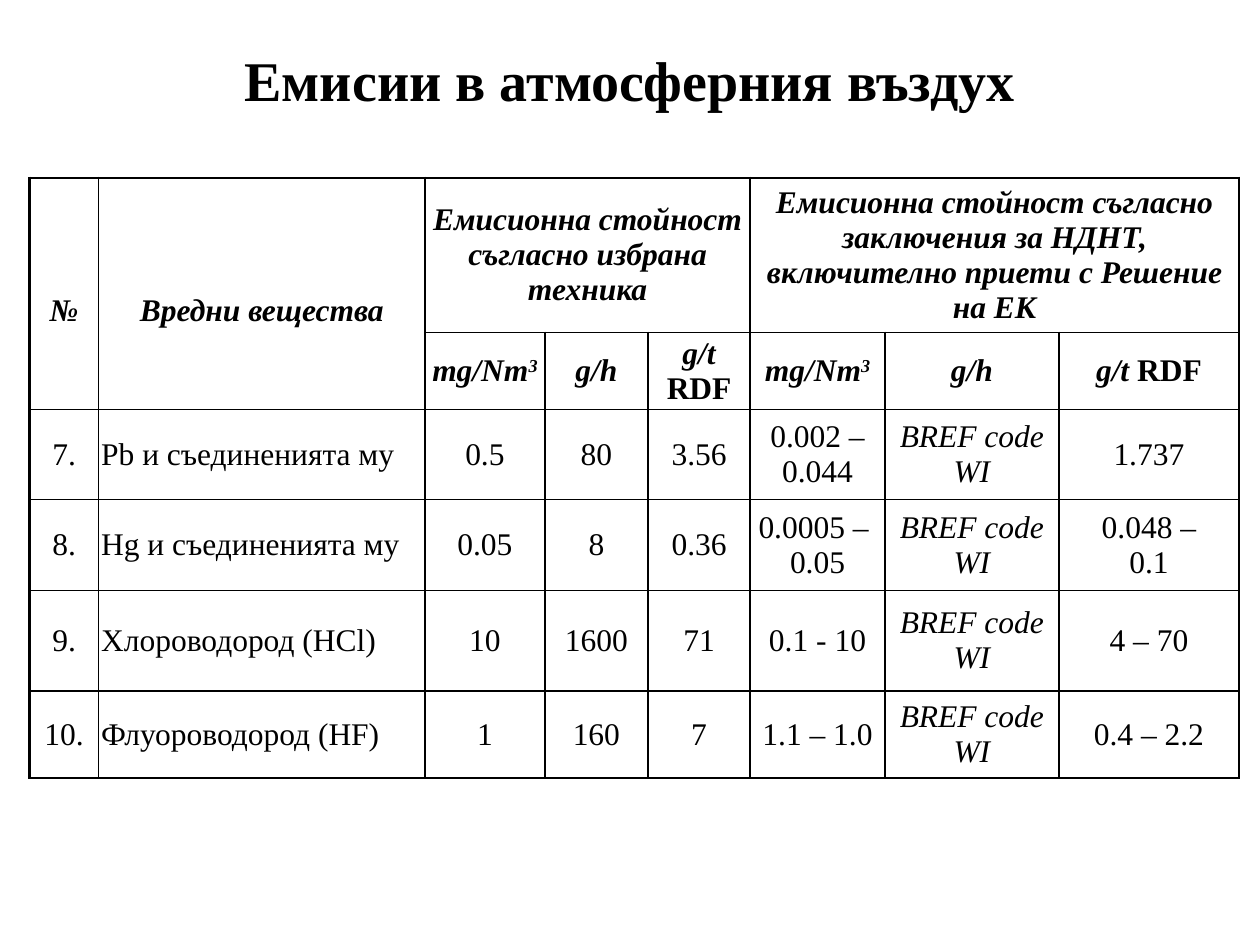
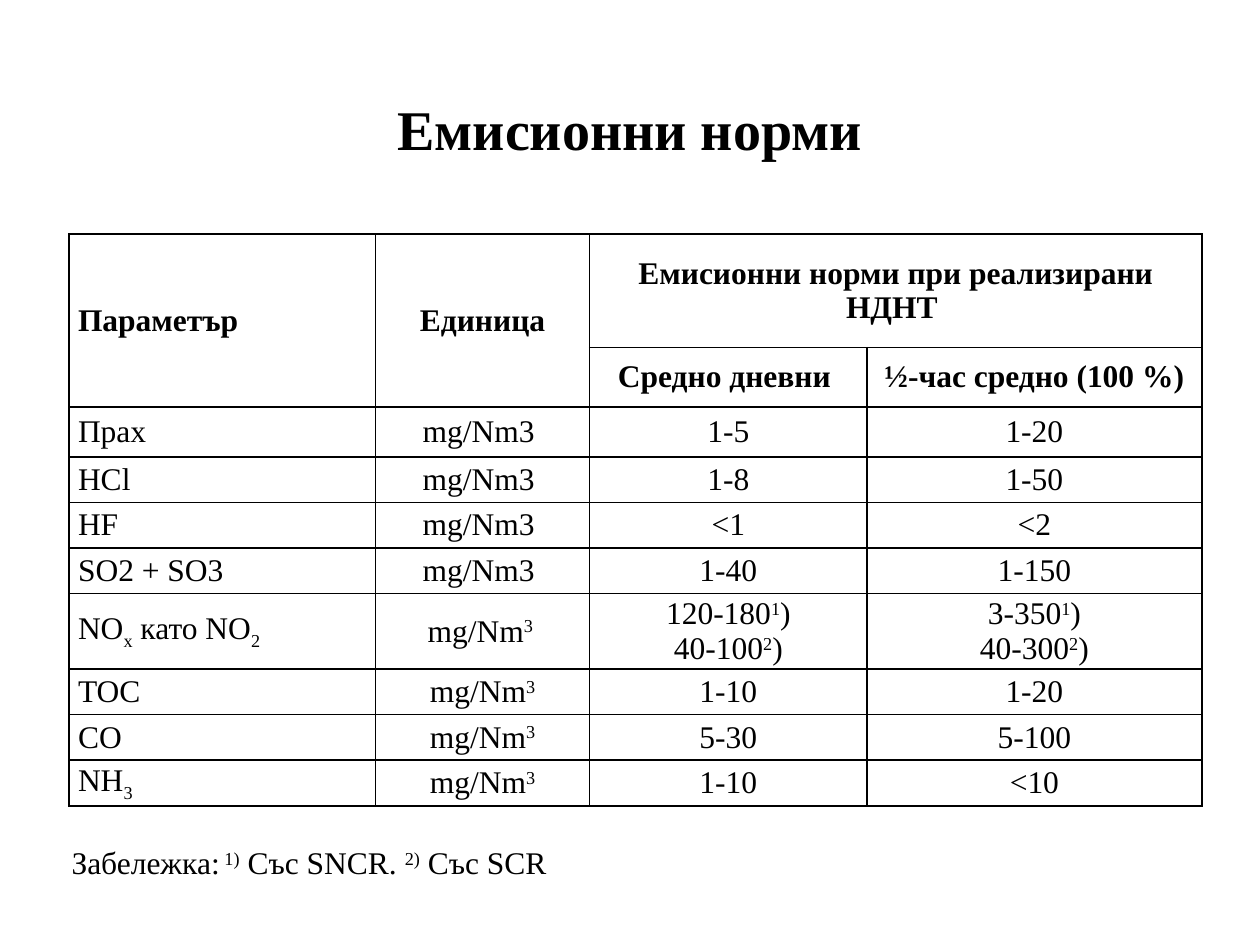
from lxml.etree import SubElement
from pptx import Presentation
from pptx.dml.color import RGBColor
from pptx.enum.text import MSO_ANCHOR, MSO_AUTO_SIZE, PP_ALIGN
from pptx.oxml.ns import qn
from pptx.util import Pt

BLACK = RGBColor(0x00, 0x00, 0x00)
WHITE = RGBColor(0xFF, 0xFF, 0xFF)
FONT = "Times New Roman"
BODY_SIZE = 18
TITLE_SIZE = 32
THIN, HEAVY = 1, 1.5
BASELINES = {"^": "30000", "~": "-25000"}

BREF = "_ВREF сode WI_"
AIR_COLUMNS = [39.6, 186.5, 68.4, 59, 58.4, 77, 99.4, 103]
AIR_ROWS = [88.4, 44, 51.6, 51.8, 57.4, 50]
AIR_CELLS = [
    ["*_№_*", "*_Вредни вещества_*",
     "*_Емисионна стойност съгласно избрана техника_*", None, None,
     "*_Емисионна стойност съгласно заключения за НДНТ, "
     "включително приети с Решение на ЕК_*", None, None],
    [None, None] + ["*_mg/Nm^3^_*", "*_g/h_*", "*_g/t _RDF*"] * 2,
    ["7.", "Pb и съединенията му", "0.5", "80", "3.56",
     "0.002 –\n0.044", BREF, "1.737"],
    ["8.", "Hg и съединенията му", "0.05", "8", "0.36",
     "0.0005 – \n0.05", BREF, "0.048 –\n0.1"],
    ["9.", "Хлороводород (HCl)", "10", "1600", "71", "0.1 - 10", BREF, "4 – 70"],
    ["10.", "Флуороводород (HF)", "1", "160", "7", "1.1 – 1.0", BREF, "0.4 – 2.2"],
]
# Top-left cell of each merged area: (rows, columns) it covers
AIR_SPANS = {(0, 0): (2, 1), (0, 1): (2, 1), (0, 2): (1, 3), (0, 5): (1, 3)}

LIMIT_COLUMNS = [175, 122.4, 158.4, 191.4]
LIMIT_ROWS = [64.8, 33.8, 28.8, 26, 26, 26, 39.5, 26, 26, 26]
LIMIT_CELLS = [
    ["*Параметър*", "*Единица*", "*Емисионни норми при реализирани НДНТ *", None],
    [None, None, "*Средно дневни *", "*½-час средно (100 %)*"],
    ["Прах", "mg/Nm3 ", "1-5", "1-20"],
    ["HCl", "mg/Nm3 ", "1-8", "1-50"],
    ["HF", "mg/Nm3 ", "<1", "<2"],
    ["SO2 + SO3", "mg/Nm3 ", "1-40", "1-150"],
    ["NO~x~ като NO~2~", "mg/Nm^3 ^", "120-180^1^)\n40-100^2^)",
     "3-350^1^)\n40-300^2^)"],
    ["TOC", "mg/Nm^3^", "1-10", "1-20"],
    ["CO", "mg/Nm^3^", "5-30", "5-100"],
    ["NH~3~", "mg/Nm^3^", "1-10", "<10"],
]
LIMIT_SPANS = {(0, 0): (2, 1), (0, 1): (2, 1), (0, 2): (1, 2)}


def split_marks(text):
    """Yield (text, active marks): *bold*, _italic_, ^raised^, ~lowered~."""
    active, piece = set(), ""
    for character in text:
        if character in "*_^~":
            if piece:
                yield piece, frozenset(active)
            active ^= {character}
            piece = ""
        else:
            piece += character
    if piece:
        yield piece, frozenset(active)


def write_text(text_frame, text, size, alignment):
    for index, line in enumerate(text.split("\n")):
        paragraph = text_frame.paragraphs[0] if index == 0 else text_frame.add_paragraph()
        paragraph.alignment = alignment
        for piece, marks in split_marks(line):
            run = paragraph.add_run()
            run.text = piece
            run.font.name = FONT
            run.font.size = Pt(size)
            run.font.color.rgb = BLACK
            run.font.bold = "*" in marks
            run.font.italic = "_" in marks
            for mark in marks & BASELINES.keys():
                run.font._element.set("baseline", BASELINES[mark])


def add_text(slide, box, text, size, alignment, anchor=MSO_ANCHOR.TOP):
    shape = slide.shapes.add_textbox(*map(Pt, box))
    shape.text_frame.word_wrap = True
    shape.text_frame.vertical_anchor = anchor
    write_text(shape.text_frame, text, size, alignment)
    return shape


def add_title(slide, top, text):
    add_text(slide, (36, top, 648, 62), f"*{text}*", TITLE_SIZE, PP_ALIGN.CENTER)


def add_note(slide, box, text):
    shape = add_text(slide, box, text, BODY_SIZE, PP_ALIGN.LEFT, MSO_ANCHOR.MIDDLE)
    shape.text_frame.auto_size = MSO_AUTO_SIZE.SHAPE_TO_FIT_TEXT


def draw_borders(cell, widths):
    """Draw the left, right, top and bottom borders with the given widths."""
    properties = cell._tc.get_or_add_tcPr()
    for side, width in zip("LRTB", widths):
        line = SubElement(properties, qn(f"a:ln{side}"), w=str(Pt(width)))
        fill = SubElement(line, qn("a:solidFill"))
        SubElement(fill, qn("a:srgbClr"), val=str(BLACK))


def add_grid(slide, left, top, columns, rows, cells, spans, inset,
             heavy_columns, heavy_rows, left_aligned, body_fill=None):
    """Add a ruled table with two header rows.

    heavy_columns and heavy_rows number the grid lines drawn heavy;
    left_aligned is (column, first row) of the left-aligned text.
    """
    frame = slide.shapes.add_table(len(rows), len(columns), Pt(left), Pt(top),
                                   Pt(sum(columns)), Pt(sum(rows)))
    table = frame.table
    table.first_row = table.horz_banding = False
    for column, width in zip(table.columns, columns):
        column.width = Pt(width)
    for row, height in zip(table.rows, rows):
        row.height = Pt(height)
    for row, values in enumerate(cells):
        for column, value in enumerate(values):
            cell = table.cell(row, column)
            if value is None:
                cell.fill.background()
                continue
            height, width = spans.get((row, column), (1, 1))
            if (height, width) != (1, 1):
                cell.merge(table.cell(row + height - 1, column + width - 1))
            cell.vertical_anchor = MSO_ANCHOR.MIDDLE
            cell.margin_left = cell.margin_right = Pt(inset)
            cell.margin_top = cell.margin_bottom = 0
            is_left = column == left_aligned[0] and row >= left_aligned[1]
            write_text(cell.text_frame, value, BODY_SIZE,
                       PP_ALIGN.LEFT if is_left else PP_ALIGN.CENTER)
            draw_borders(cell, [HEAVY if heavy else THIN for heavy in (
                column in heavy_columns, column + width in heavy_columns,
                row in heavy_rows, row + height in heavy_rows)])
            if body_fill is not None and row >= 2:
                cell.fill.solid()
                cell.fill.fore_color.rgb = body_fill
            else:
                cell.fill.background()
    return table


def build_air_emissions(slide):
    table = add_grid(slide, 16.8, 101.6, AIR_COLUMNS, AIR_ROWS, AIR_CELLS, AIR_SPANS,
                     inset=1.4, heavy_columns={0, 2, 5, 8}, heavy_rows={0},
                     left_aligned=(1, 2))
    for column in (0, 1):
        table.cell(0, column).margin_top = Pt(20)
    add_title(slide, 22.4, "Емисии в атмосферния въздух")


def build_emission_limits(slide):
    add_grid(slide, 39.6, 133.8, LIMIT_COLUMNS, LIMIT_ROWS, LIMIT_CELLS, LIMIT_SPANS,
             inset=5, heavy_columns={0, 4}, heavy_rows={0, 2, 10},
             left_aligned=(0, 0), body_fill=WHITE)
    add_note(slide, (33.8, 478, 495.4, 29), "Забележка:^ 1)^ Със SNCR. ^2)^ Със SCR")
    add_title(slide, 50.4, "Емисионни норми")


def main():
    presentation = Presentation()
    presentation.slide_width, presentation.slide_height = Pt(720), Pt(540)
    for build in (build_air_emissions, build_emission_limits):
        build(presentation.slides.add_slide(presentation.slide_layouts[6]))
    presentation.save("out.pptx")


if __name__ == "__main__":
    main()
